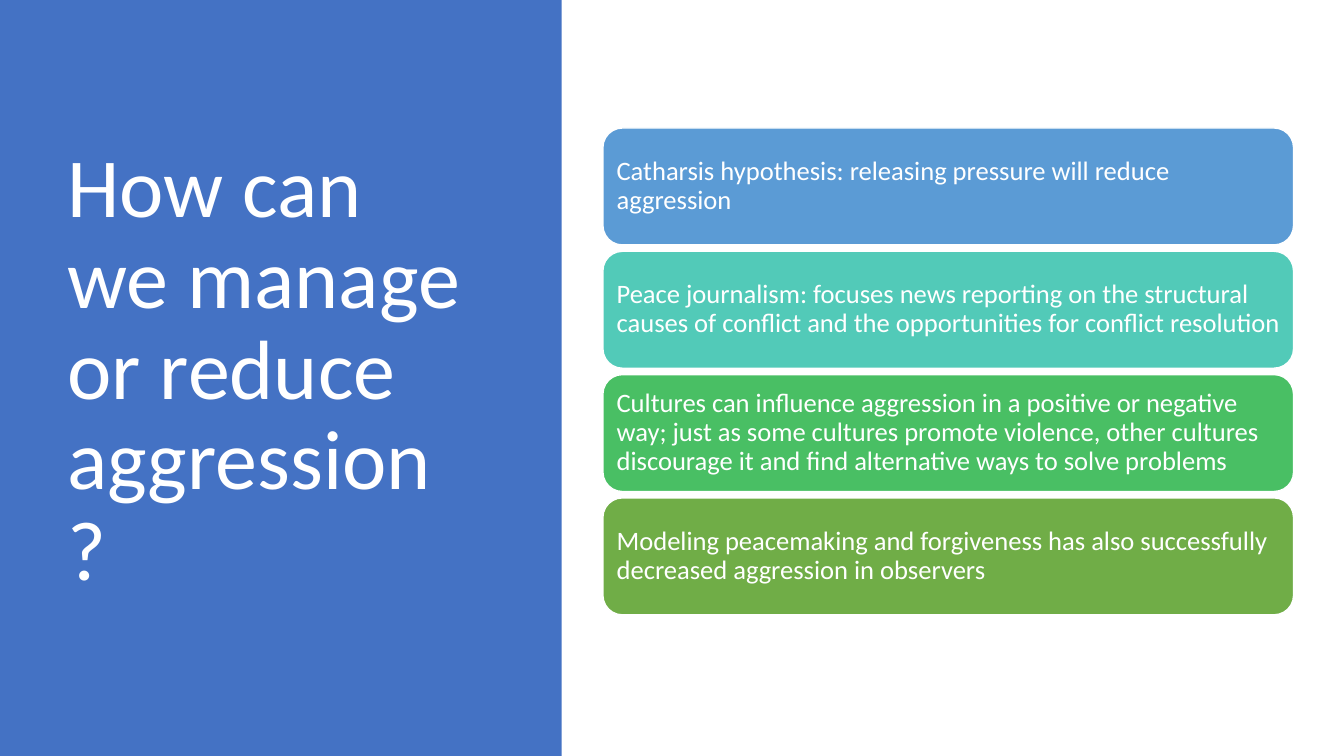
from pptx import Presentation
from pptx.dml.color import RGBColor
from pptx.enum.shapes import MSO_SHAPE
from pptx.enum.text import MSO_ANCHOR, PP_ALIGN
from pptx.util import Inches, Pt

RECT = MSO_SHAPE.RECTANGLE
ROUNDED = MSO_SHAPE.ROUNDED_RECTANGLE
MIDDLE = MSO_ANCHOR.MIDDLE
LEFT = PP_ALIGN.LEFT

TITLE = "How can we manage or reduce aggression?"
METHODS = [
    ("5B9BD5", "Catharsis hypothesis: releasing pressure will reduce aggression"),
    ("52CAB8", "Peace journalism: focuses news reporting on the structural causes of "
               "conflict and the opportunities for conflict resolution"),
    ("49BF64", "Cultures can influence aggression in a positive or negative way; just as "
               "some cultures promote violence, other cultures discourage it and find "
               "alternative ways to solve problems"),
    ("70AD47", "Modeling peacemaking and forgiveness has also successfully decreased "
               "aggression in observers"),
]
CARD_TOP, CARD_PITCH = 16.93, 16.31


def color(hex_value):
    return RGBColor.from_string(hex_value)


class SlideBuilder:
    """Draws styled elements on one slide, with lengths in percent of its size."""

    font = "Calibri"
    ink = "FFFFFF"

    def __init__(self, prs):
        self.prs = prs
        self.s = prs.slides.add_slide(prs.slide_layouts[6])

    def box(self, x, y, w, h):
        width, height = self.prs.slide_width, self.prs.slide_height
        return [round(share * size / 100) for share, size in
                ((x, width), (y, height), (w, width), (h, height))]

    def set_text(self, sp, text, size, inset):
        tf = sp.text_frame
        sides = ("margin_left", "margin_top", "margin_right", "margin_bottom")
        frame = {"word_wrap": True, "vertical_anchor": MIDDLE}
        frame.update(dict.fromkeys(sides, Inches(inset)))
        p = tf.paragraphs[0]
        r = p.add_run()
        r.text = text
        formats = (
            (tf, frame),
            (p, {"line_spacing": 0.9, "alignment": LEFT}),
            (r.font, {"name": self.font, "size": Pt(size)}),
        )
        for target, values in formats:
            for name, value in values.items():
                setattr(target, name, value)
        r.font.color.rgb = color(self.ink)

    def panel(self, kind, place, fill):
        sp = self.s.shapes.add_shape(kind, *self.box(*place))
        sp.shadow.inherit = False
        sp.fill.solid()
        sp.fill.fore_color.rgb = color(fill)
        sp.line.fill.background()
        return sp

    def title(self, place, text):
        sp = self.s.shapes.add_textbox(*self.box(*place))
        self.set_text(sp, text, 60, 0.1)

    def card(self, place, fill, text):
        sp = self.panel(ROUNDED, place, fill)
        sp.line.color.rgb = color(self.ink)
        sp.line.width = Pt(1)
        self.set_text(sp, text, 19, 0.08)


def main():
    prs = Presentation()
    prs.slide_width, prs.slide_height = Inches(13.33), Inches(7.5)
    slide = SlideBuilder(prs)
    slide.panel(RECT, (0, 0, 41.79, 100), "4472C4")
    slide.title((4.28, 9.07, 31.21, 80.27), TITLE)
    for row, (fill, text) in enumerate(METHODS):
        slide.card((44.86, CARD_TOP + row * CARD_PITCH, 51.39, 15.47), fill, text)
    prs.save("out.pptx")


if __name__ == "__main__":
    main()
